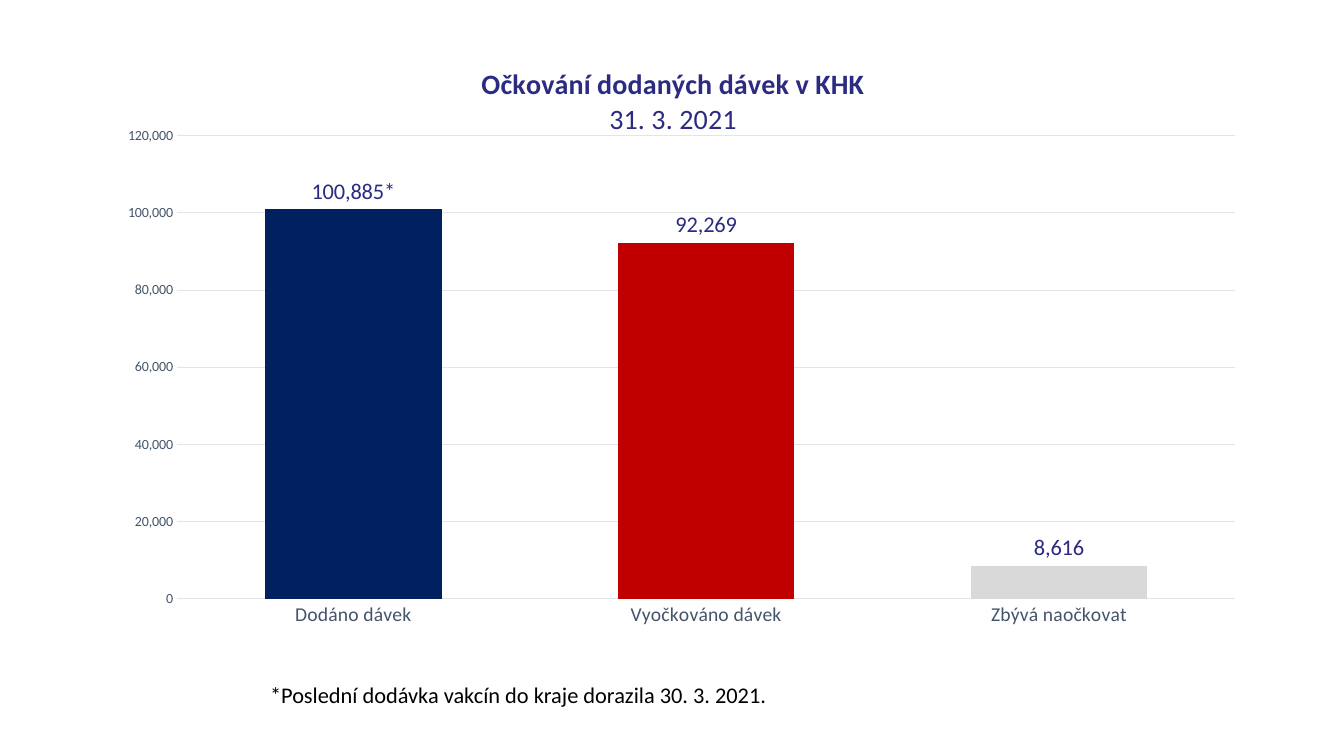
from pptx import Presentation
from pptx.chart.data import CategoryChartData as ChartData
from pptx.dml.color import RGBColor
from pptx.enum.chart import XL_CHART_TYPE as Kind, XL_LABEL_POSITION as Spot
from pptx.enum.chart import XL_TICK_MARK as Tick
from pptx.enum.shapes import MSO_SHAPE as Shape
from pptx.enum.text import MSO_ANCHOR as Anchor, PP_ALIGN as Align
from pptx.oxml import parse_xml
from pptx.oxml.ns import nsdecls, qn
from pptx.util import Pt

PX = 9144  # EMU per px, 100 px to the inch
NAVY, SLATE, RULE = "2B2B82", "44546A", "E0E5EB"
BARS = [
    ("Dodáno dávek", 100885, "002060"),
    ("Vyočkováno dávek", 92269, "C00000"),
    ("Zbývá naočkovat", 8616, "D9D9D9"),
]


def px(*nums):
    return [n * PX for n in nums]


def paint(item, color):
    item.fill.solid()
    item.fill.fore_color.rgb = RGBColor.from_string(color)


def style(font, size, color, bold=False):
    font.name, font.size, font.bold = "Calibri", Pt(size), bold
    font.color.rgb = RGBColor.from_string(color)


def rule(line):
    line.color.rgb = RGBColor.from_string(RULE)
    line.width = Pt(0.75)


def write(para, text, size, color, bold=False):
    run = para.add_run()
    run.text = text
    style(run.font, size, color, bold)


def place(part, index, **vals):
    """Give a chart part a manual layout, in shares of the chart."""
    for old in part.findall(qn("c:layout")):
        part.remove(old)
    inner = '<c:layoutTarget val="inner"/>' if "w" in vals else ""
    modes = "".join(f'<c:{k}Mode val="edge"/>' for k in "xy")
    sizes = "".join(f'<c:{k} val="{v}"/>' for k, v in vals.items())
    part.insert(index, parse_xml(
        f'<c:layout {nsdecls("c")}><c:manualLayout>{inner}{modes}{sizes}'
        '</c:manualLayout></c:layout>'))


def add_title(chart):
    frame = chart.chart_title.text_frame
    write(frame.paragraphs[0], "Očkování dodaných dávek v KHK", 20, NAVY, True)
    write(frame.add_paragraph(), "31. 3. 2021", 20, NAVY)
    for para in frame.paragraphs:
        para.alignment = Align.CENTER
    place(chart.chart_title._element, 1, x=0.33, y=0.04)


def style_axes(chart):
    cat, val = chart.category_axis, chart.value_axis
    for axis, size in ((cat, 14), (val, 10)):
        axis.major_tick_mark = axis.minor_tick_mark = Tick.NONE
        style(axis.tick_labels.font, size, SLATE)
    rule(cat.format.line)
    val.format.line.fill.background()
    val.has_major_gridlines = True
    rule(val.major_gridlines.format.line)
    val.minimum_scale, val.maximum_scale, val.major_unit = 0, 120000, 20000
    val.tick_labels.number_format = "#,##0"
    val.tick_labels.number_format_is_linked = False


def style_bars(plot):
    plot.gap_width, plot.overlap = 100, -24
    plot.vary_by_categories = False
    series = plot.series[0]
    for i, (_, _, color) in enumerate(BARS):
        paint(series.points[i].format, color)
    labels = series.data_labels
    labels.show_value = True
    labels.position = Spot.OUTSIDE_END
    labels.number_format = "#,##0"
    labels.number_format_is_linked = False
    style(labels.font, 16, NAVY)
    first = series.points[0].data_label
    write(first.text_frame.paragraphs[0], "100,885*", 16, NAVY)
    first.position = Spot.OUTSIDE_END


def add_bars(slide, box):
    data = ChartData(number_format="#,##0")
    data.categories = [name for name, _, _ in BARS]
    data.add_series("Series 1", [value for _, value, _ in BARS])
    chart = slide.shapes.add_chart(Kind.COLUMN_CLUSTERED, *px(*box), data).chart
    chart.has_legend = False
    style(chart.font, 10, "000000")
    add_title(chart)
    style_axes(chart)
    style_bars(chart.plots[0])
    area = chart._chartSpace.chart.plotArea
    place(area, 0, x=0.07, y=0.15, w=0.913, h=0.692)


def add_note(slide, box):
    note = slide.shapes.add_shape(Shape.RECTANGLE, *px(*box))
    note.shadow.inherit = False
    paint(note, "FFFFFF")
    note.line.fill.background()
    frame = note.text_frame
    frame.word_wrap = True
    frame.vertical_anchor = Anchor.TOP
    para = frame.paragraphs[0]
    para.alignment = Align.LEFT
    write(para, "*Poslední dodávka vakcín do kraje dorazila 30. 3. 2021.", 16, "000000")


def main():
    deck = Presentation()
    deck.slide_width, deck.slide_height = px(1333, 750)
    slide = deck.slides.add_slide(deck.slide_layouts[6])
    add_bars(slide, (95, 35, 1150, 664))
    add_note(slide, (258, 671, 775, 28))
    deck.save("out.pptx")


if __name__ == "__main__":
    main()
